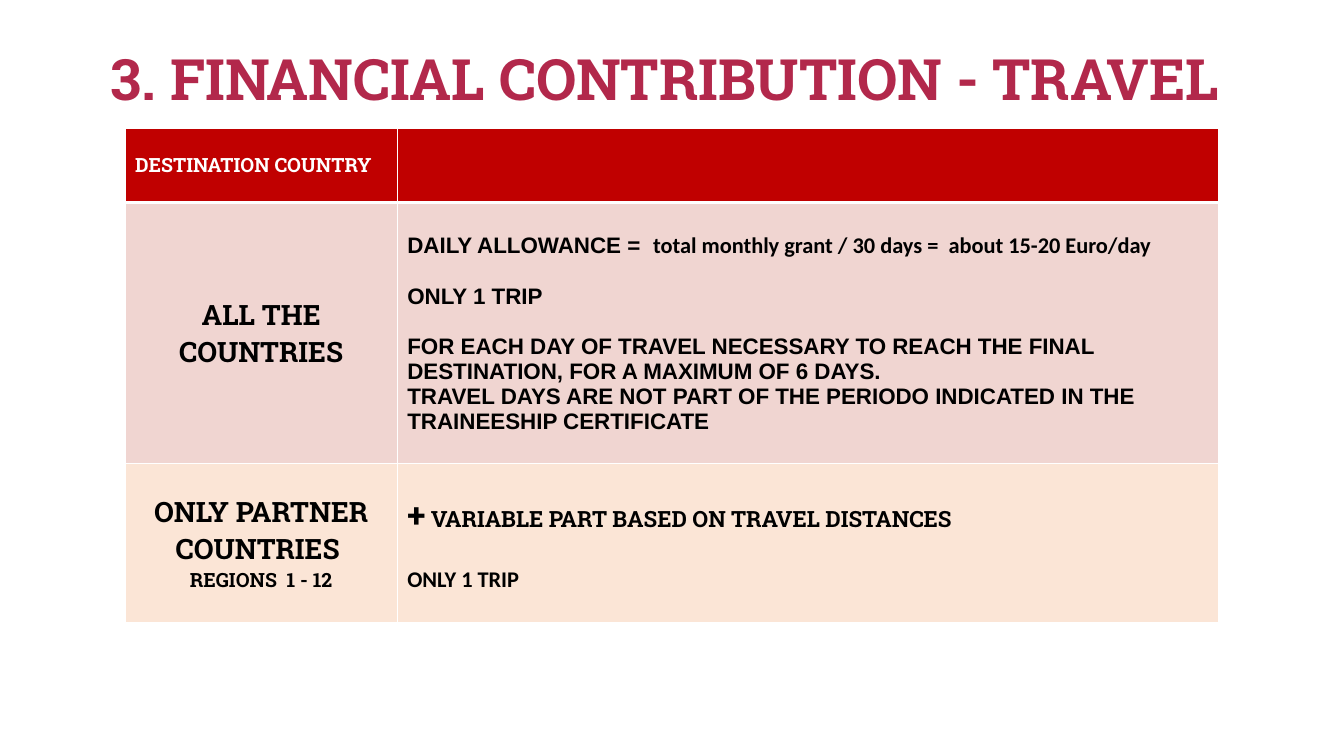
from lxml import etree
from pptx import Presentation
from pptx.dml.color import RGBColor
from pptx.enum import text
from pptx.oxml.ns import qn
from pptx.util import Inches, Pt

SLAB, ARIAL, CALIBRI = "Roboto Slab", "Arial", "Calibri"
WHITE, BLACK = "FFFFFF", "000000"
LEFT, CENTER = text.PP_ALIGN.LEFT, text.PP_ALIGN.CENTER

TITLE = [("3. FINANCIAL CONTRIBUTION - TRAVEL ", 40.7, SLAB)]
COLUMNS = [2.7, 8.15]
# Each row: height, fill, text colour, bottom border, cells.
# Each cell: alignment, paragraphs as (space before, runs).
ROWS = [
    (0.74, "C00000", WHITE, 3, [
        (LEFT, [(0, [("DESTINATION COUNTRY", 14, SLAB)])]),
        (LEFT, []),
    ]),
    (2.59, "F0D5D1", BLACK, 1, [
        (CENTER, [(0, [("ALL THE COUNTRIES", 20, SLAB)])]),
        (LEFT, [
            (0, [("DAILY ALLOWANCE =  ", 16, ARIAL),
                 ("total monthly grant / 30 days =  about 15-20 Euro/day", 16, CALIBRI)]),
            (18, [("ONLY 1 TRIP", 16, ARIAL)]),
            (18, [("FOR EACH DAY OF TRAVEL NECESSARY TO REACH THE FINAL "
                   "DESTINATION, FOR A MAXIMUM OF 6 DAYS.", 16, ARIAL)]),
            (0, [("TRAVEL DAYS ARE NOT PART OF THE PERIODO INDICATED IN THE "
                  "TRAINEESHIP CERTIFICATE", 16, ARIAL)]),
        ]),
    ]),
    (1.58, "FBE5D6", BLACK, 1, [
        (CENTER, [(0, [("ONLY PARTNER COUNTRIES ", 20, SLAB)]),
                  (0, [("REGIONS  1 - 12", 14, SLAB)])]),
        (LEFT, [
            (0, [("+", 24, SLAB),
                 (" VARIABLE PART BASED ON TRAVEL DISTANCES", 16, SLAB)]),
            (21, [("ONLY 1 TRIP", 16, CALIBRI)]),
        ]),
    ]),
]


def rgb(color):
    return RGBColor.from_string(color)


def add_runs(p, runs, color):
    for words, size, font in runs:
        r = p.add_run()
        r.text = words
        r.font.size, r.font.name, r.font.bold = Pt(size), font, True
        r.font.color.rgb = rgb(color)


def set_borders(cell, widths):
    """Draw white left, right, top and bottom borders, widths in points."""
    tcPr = cell._tc.get_or_add_tcPr()
    for i, (side, width) in enumerate(zip("LRTB", widths)):
        ln = etree.Element(qn("a:ln" + side), w=str(Pt(width)))
        fill = etree.SubElement(ln, qn("a:solidFill"))
        etree.SubElement(fill, qn("a:srgbClr"), val=WHITE)
        tcPr.insert(i, ln)


def fill_cell(cell, align, paragraphs, color):
    cell.vertical_anchor = text.MSO_ANCHOR.MIDDLE
    tf = cell.text_frame
    for i, (space, runs) in enumerate(paragraphs):
        p = tf.add_paragraph() if i else tf.paragraphs[0]
        p.alignment = align
        if space:
            p.space_before = Pt(space)
        add_runs(p, runs, color)


prs = Presentation()
prs.slide_width, prs.slide_height = Inches(13.33), Inches(7.5)
s = prs.slides.add_slide(prs.slide_layouts[6])

title = s.shapes.add_textbox(Inches(0.67), Inches(0.46), Inches(11.99), Inches(0.84))
tf = title.text_frame
tf.word_wrap = True
p = tf.paragraphs[0]
p.alignment, p.line_spacing = CENTER, 0.9
add_runs(p, TITLE, "B2284B")

table = s.shapes.add_table(
    len(ROWS), len(COLUMNS), Inches(1.24), Inches(1.27),
    Inches(sum(COLUMNS)), Inches(sum(row[0] for row in ROWS))).table
for column, width in zip(table.columns, COLUMNS):
    column.width = Inches(width)

top_border = 1
for i, (height, fill, color, bottom_border, cells) in enumerate(ROWS):
    table.rows[i].height = Inches(height)
    for j, (align, paragraphs) in enumerate(cells):
        cell = table.cell(i, j)
        cell.fill.solid()
        cell.fill.fore_color.rgb = rgb(fill)
        set_borders(cell, (1, 1, top_border, bottom_border))
        fill_cell(cell, align, paragraphs, color)
    top_border = bottom_border

prs.save("out.pptx")
